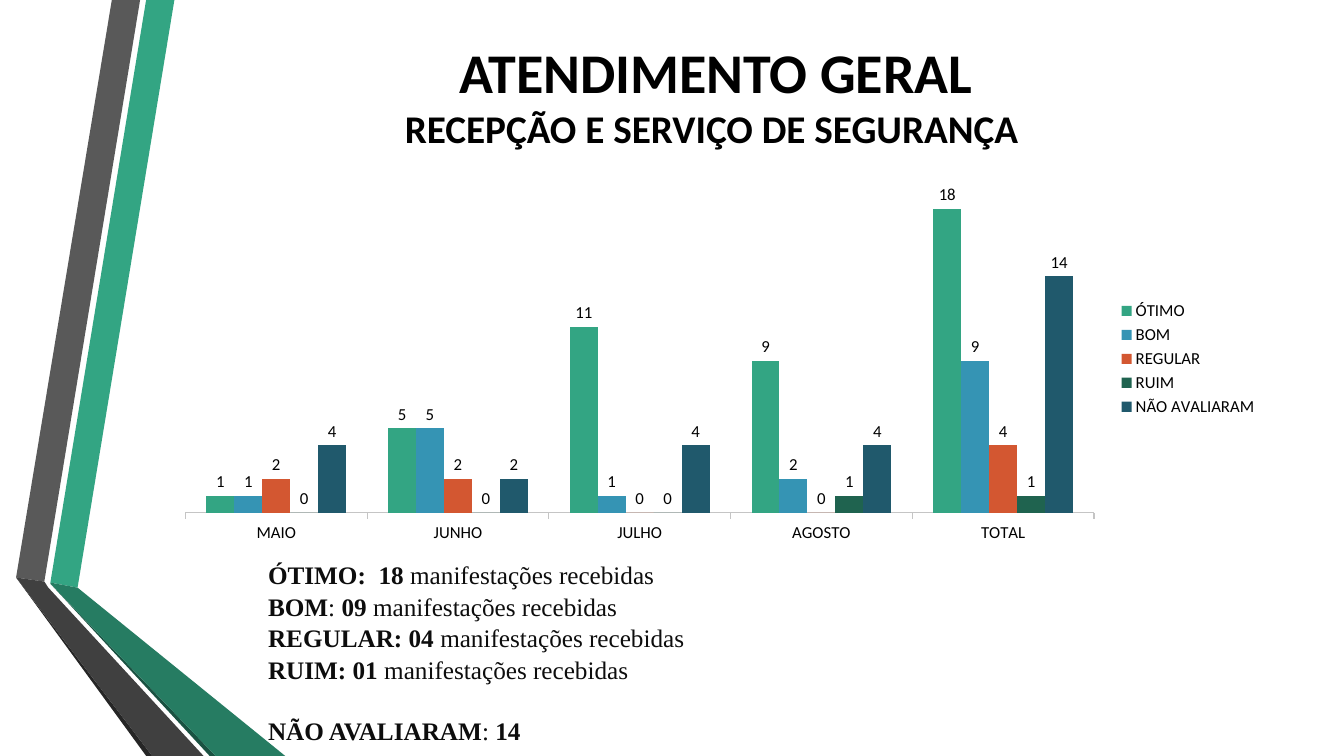
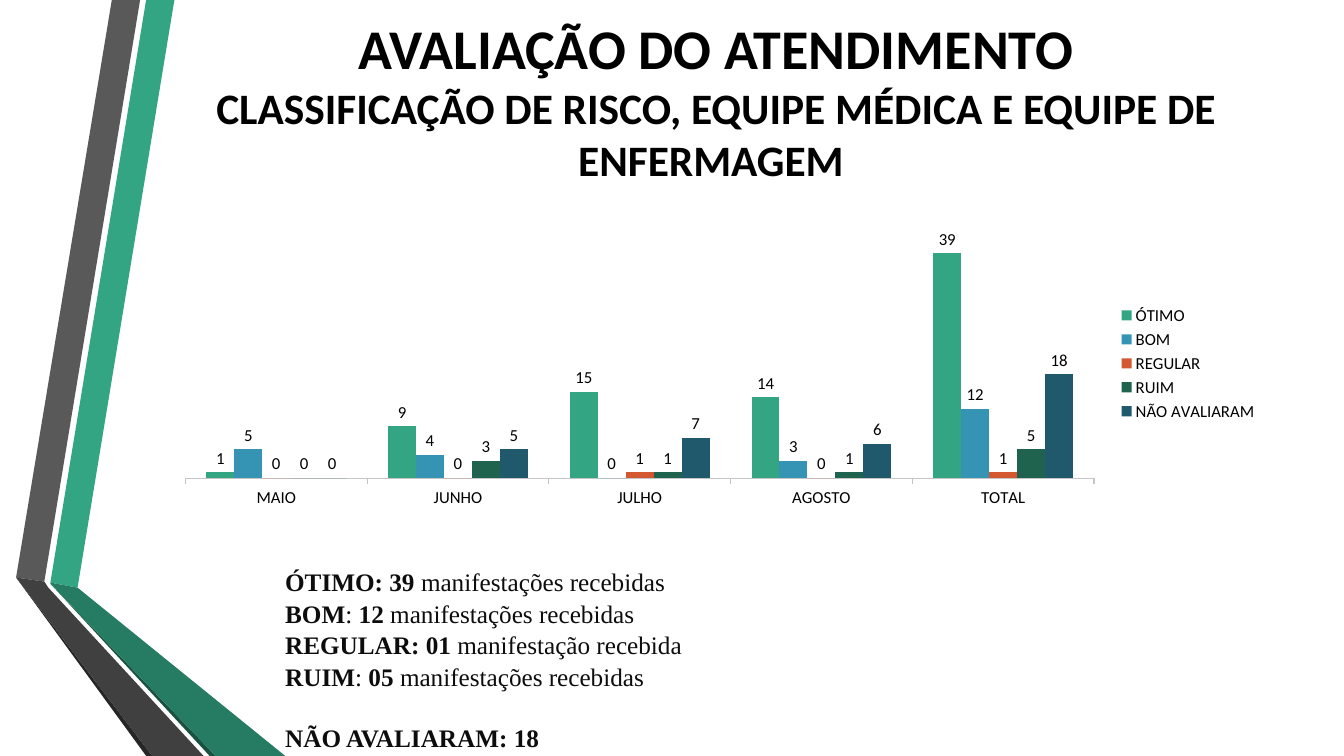
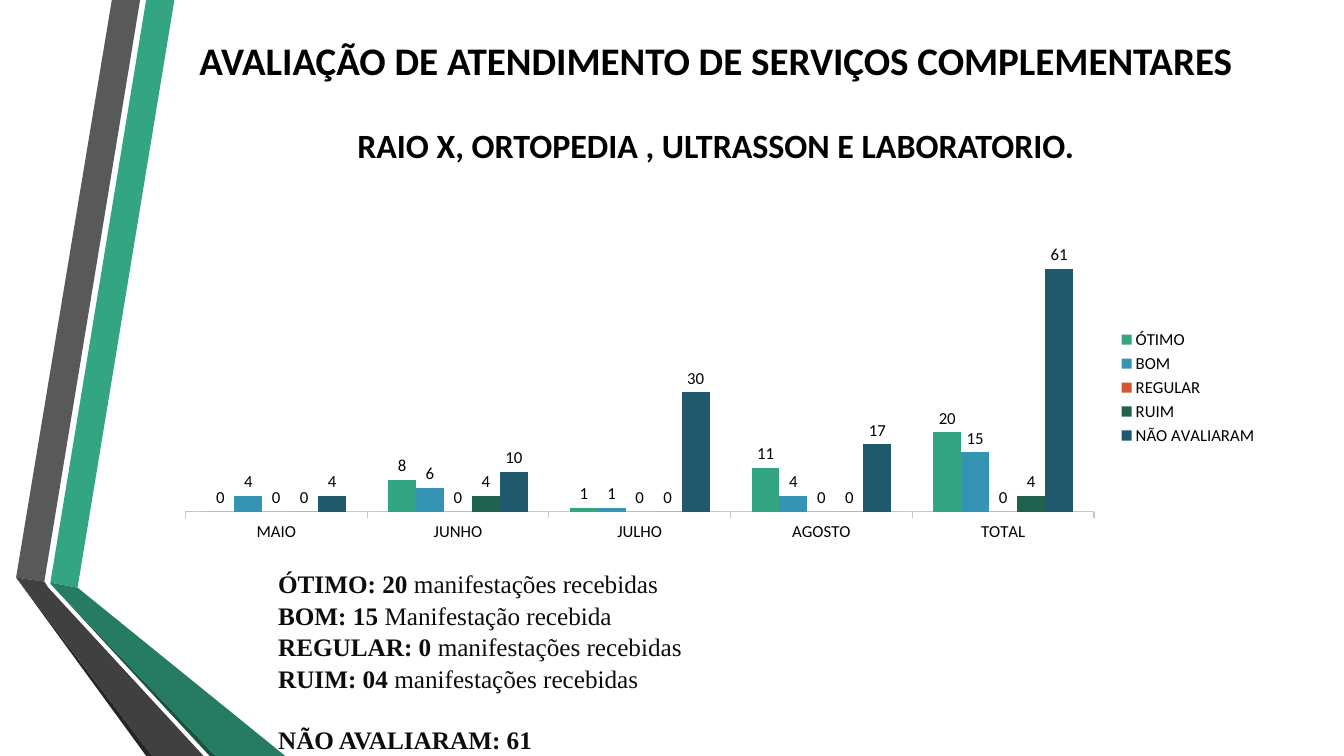
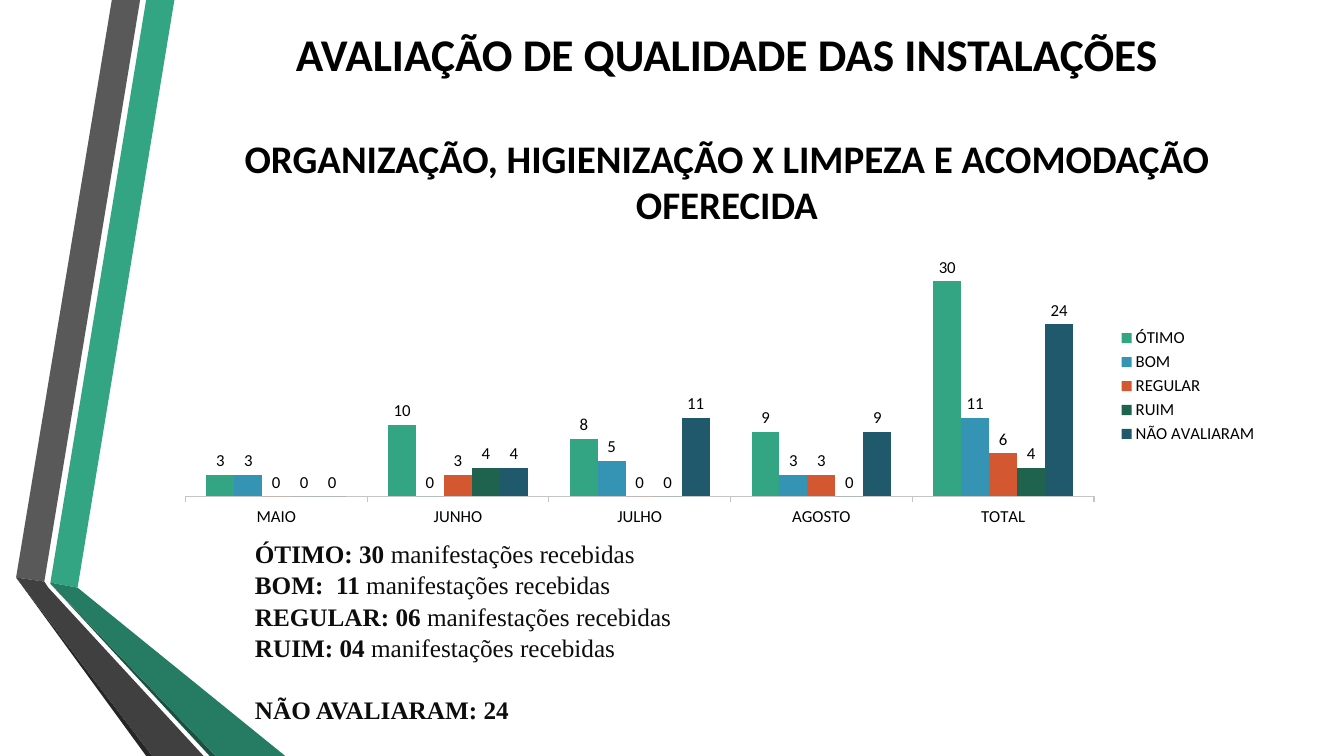
"""Build four slides of service ratings, each with a title, a column chart and a summary."""
from dataclasses import dataclass

from pptx import Presentation
from pptx.chart.data import CategoryChartData
from pptx.dml.color import RGBColor
from pptx.enum.chart import XL_CHART_TYPE, XL_LABEL_POSITION, XL_LEGEND_POSITION, XL_TICK_MARK
from pptx.enum.text import MSO_ANCHOR, MSO_AUTO_SIZE, PP_ALIGN
from pptx.util import Inches, Pt


@dataclass(frozen=True)
class Theme:
    heading_font: str = "Calibri"
    body_font: str = "Times New Roman"
    black: str = "000000"
    body_color: str = "0D0D0D"
    axis_color: str = "C5C5C5"
    series_colors: tuple = ("33A583", "3594B4", "D35731", "1F634F", "20596C")
    body_size: float = 18
    chart_size: float = 12
    body_spacing: float = 1.04
    body_gap: float = 21.6


THEME = Theme()
TITLE_ONLY = 5
LEFT, WIDTH = 1.62, 10.96
RIGHT = LEFT + WIDTH
MONTHS = ("MAIO", "JUNHO", "JULHO", "AGOSTO", "TOTAL")
RATINGS = ("ÓTIMO", "BOM", "REGULAR", "RUIM", "NÃO AVALIARAM")
RECEIVED = "manifestações recebidas"

RIBBONS = (
    ("33A583", ((0.5, 5.78), (0.77, 5.83), (1.73, 0), (1.45, 0))),
    ("595959", ((1.39, 0), (1.11, 0), (0.16, 5.73), (0.44, 5.77))),
    ("262626", ((0.16, 5.73), (1.45, 7.5), (1.51, 7.5))),
    ("1A5242", ((0.5, 5.79), (2.08, 7.5), (2.14, 7.5))),
    ("267C62", ((0.5, 5.79), (2.14, 7.5), (2.83, 7.5), (0.77, 5.83), (0.5, 5.78))),
    ("404040", ((2.02, 7.5), (0.48, 5.83), (0.44, 5.77), (0.16, 5.73), (1.51, 7.5))),
)

SLIDES = (
    {
        "title": (("ATENDIMENTO GERAL", 40), ("RECEPÇÃO E SERVIÇO DE SEGURANÇA ", 28)),
        "title_box": (LEFT, 0.21, WIDTH, 1.45),
        "title_gap": 0,
        "chart_box": (LEFT, 1.66, WIDTH, 3.8),
        "maximum": 20,
        "values": ((1, 5, 11, 9, 18), (1, 5, 1, 2, 9), (2, 2, 0, 0, 4),
                   (0, 0, 0, 1, 1), (4, 2, 4, 4, 14)),
        "summary_at": (2.56, 5.49),
        "summary": (("ÓTIMO:  18 ", RECEIVED), ("BOM", ": ", "09 ", RECEIVED),
                    ("REGULAR: 04 ", RECEIVED), ("RUIM: 01 ", RECEIVED),
                    ("NÃO AVALIARAM", ": ", "14")),
    },
    {
        "title": (("AVALIAÇÃO DO ATENDIMENTO", 40),
                  ("CLASSIFICAÇÃO DE RISCO, EQUIPE MÉDICA E EQUIPE DE ENFERMAGEM ", 31)),
        "title_box": (LEFT, 0, WIDTH, 1.97),
        "title_gap": 0,
        "chart_box": (LEFT, 2.11, WIDTH, 2.99),
        "maximum": 45,
        "values": ((1, 9, 15, 14, 39), (5, 4, 0, 3, 12), (0, 0, 1, 0, 1),
                   (0, 3, 1, 1, 5), (0, 5, 7, 6, 18)),
        "summary_at": (2.73, 5.56),
        "summary": (("ÓTIMO: 39 ", RECEIVED), ("BOM", ": ", "12 ", RECEIVED),
                    ("REGULAR: 01 ", "manifestação recebida"),
                    ("RUIM", ": ", "05 ", RECEIVED), ("NÃO AVALIARAM: 18",)),
    },
    {
        "title": (("AVALIAÇÃO DE ATENDIMENTO DE SERVIÇOS COMPLEMENTARES", 27.9),
                  ("RAIO X, ORTOPEDIA , ULTRASSON E LABORATORIO.", 24.3)),
        "title_box": (LEFT, 0, WIDTH, 2),
        "title_gap": 29,
        "chart_box": (LEFT, 2.25, WIDTH, 3.19),
        "maximum": 70,
        "values": ((0, 8, 1, 11, 20), (4, 6, 1, 4, 15), (0, 0, 0, 0, 0),
                   (0, 4, 0, 0, 4), (4, 10, 30, 17, 61)),
        "summary_at": (2.66, 5.58),
        "summary": (("ÓTIMO: 20 ", RECEIVED), ("BOM: 15 ", "Manifestação recebida"),
                    ("REGULAR: 0 ", RECEIVED), ("RUIM: 04 ", RECEIVED),
                    ("NÃO AVALIARAM: 61",)),
    },
    {
        "title": (("AVALIAÇÃO DE QUALIDADE DAS INSTALAÇÕES", 32.4),
                  ("ORGANIZAÇÃO, HIGIENIZAÇÃO X LIMPEZA E ACOMODAÇÃO OFERECIDA", 27.9)),
        "title_box": (1.73, 0, WIDTH, 2.52),
        "title_gap": 38,
        "chart_box": (LEFT, 2.38, WIDTH, 2.9),
        "maximum": 35,
        "values": ((3, 10, 8, 9, 30), (3, 0, 5, 3, 11), (0, 3, 0, 3, 6),
                   (0, 4, 0, 0, 4), (0, 4, 11, 9, 24)),
        "summary_at": (2.43, 5.28),
        "summary": (("ÓTIMO: 30 ", RECEIVED), ("BOM:  11 ", RECEIVED),
                    ("REGULAR: 06 ", RECEIVED), ("RUIM: 04 ", RECEIVED),
                    ("NÃO AVALIARAM: 24",)),
    },
)


def set_attributes(target, values):
    for name, value in values.items():
        setattr(target, name, value)


def format_font(font, name, size, color, bold=False):
    set_attributes(font, {"name": name, "size": Pt(size), "bold": bold})
    font.color.rgb = RGBColor.from_string(color)


def format_chart_font(font):
    format_font(font, THEME.heading_font, THEME.chart_size, THEME.black)


def add_ribbons(presentation, slide):
    master_tree = presentation.slide_master.shapes.element
    for number, (color, points) in enumerate(RIBBONS, start=100):
        start, *others = [(Inches(x), Inches(y)) for x, y in points]
        builder = slide.shapes.build_freeform(*start)
        builder.add_line_segments(others, close=True)
        ribbon = builder.convert_to_shape()
        ribbon.shadow.inherit = False
        ribbon.fill.solid()
        ribbon.fill.fore_color.rgb = RGBColor.from_string(color)
        ribbon.line.fill.background()
        ribbon.element.nvSpPr.cNvPr.set("id", str(number))
        master_tree.append(ribbon.element)


def set_title(slide, lines, box, gap):
    title = slide.shapes.title
    set_attributes(title, dict(zip(("left", "top", "width", "height"), map(Inches, box))))
    frame = title.text_frame
    set_attributes(frame, {"word_wrap": True, "auto_size": MSO_AUTO_SIZE.NONE,
                           "vertical_anchor": MSO_ANCHOR.MIDDLE})
    for index, (text, size) in enumerate(lines):
        paragraph = frame.add_paragraph() if index else frame.paragraphs[0]
        set_attributes(paragraph, {"alignment": PP_ALIGN.CENTER,
                                   "space_before": Pt(gap if index else 0)})
        run = paragraph.add_run()
        run.text = text
        format_font(run.font, THEME.heading_font, size, THEME.black, bold=True)


def add_summary(slide, lines, position):
    left, top = position
    box = slide.shapes.add_textbox(Inches(left), Inches(top), Inches(RIGHT - left), Inches(1.92))
    frame = box.text_frame
    frame.word_wrap = True
    for index, pieces in enumerate(lines):
        paragraph = frame.add_paragraph() if index else frame.paragraphs[0]
        paragraph.line_spacing = THEME.body_spacing
        for position_in_line, text in enumerate(pieces):
            run = paragraph.add_run()
            run.text = text
            format_font(run.font, THEME.body_font, THEME.body_size, THEME.body_color,
                        bold=position_in_line % 2 == 0)
    frame.paragraphs[-1].space_before = Pt(THEME.body_gap)


def add_ratings_chart(slide, values, maximum, box):
    data = CategoryChartData()
    data.categories = MONTHS
    for rating, counts in zip(RATINGS, values):
        data.add_series(rating, counts)
    chart = slide.shapes.add_chart(
        XL_CHART_TYPE.COLUMN_CLUSTERED, *map(Inches, box), data).chart
    set_attributes(chart, {"has_title": False, "has_legend": True})
    set_attributes(chart.legend, {"position": XL_LEGEND_POSITION.RIGHT,
                                  "include_in_layout": False})
    set_attributes(chart.value_axis, {"visible": False, "has_major_gridlines": False,
                                      "minimum_scale": 0, "maximum_scale": maximum})
    axis = chart.category_axis
    axis.major_tick_mark = XL_TICK_MARK.OUTSIDE
    axis.format.line.width = Pt(0.75)
    axis.format.line.color.rgb = RGBColor.from_string(THEME.axis_color)
    for owner in (chart, chart.legend):
        format_chart_font(owner.font)
    format_chart_font(axis.tick_labels.font)
    plot = chart.plots[0]
    set_attributes(plot, {"gap_width": 150, "overlap": 0, "vary_by_categories": False})
    for series, color in zip(plot.series, THEME.series_colors):
        series.format.fill.solid()
        series.format.fill.fore_color.rgb = RGBColor.from_string(color)
        labels = series.data_labels
        set_attributes(labels, {"show_value": True, "position": XL_LABEL_POSITION.OUTSIDE_END})
        format_chart_font(labels.font)


def main():
    presentation = Presentation()
    set_attributes(presentation, {"slide_width": Inches(13.33), "slide_height": Inches(7.5)})
    for content in SLIDES:
        slide = presentation.slides.add_slide(presentation.slide_layouts[TITLE_ONLY])
        set_title(slide, content["title"], content["title_box"], content["title_gap"])
        add_summary(slide, content["summary"], content["summary_at"])
        add_ratings_chart(slide, content["values"], content["maximum"], content["chart_box"])
    add_ribbons(presentation, presentation.slides[0])
    presentation.save("out.pptx")


if __name__ == "__main__":
    main()
